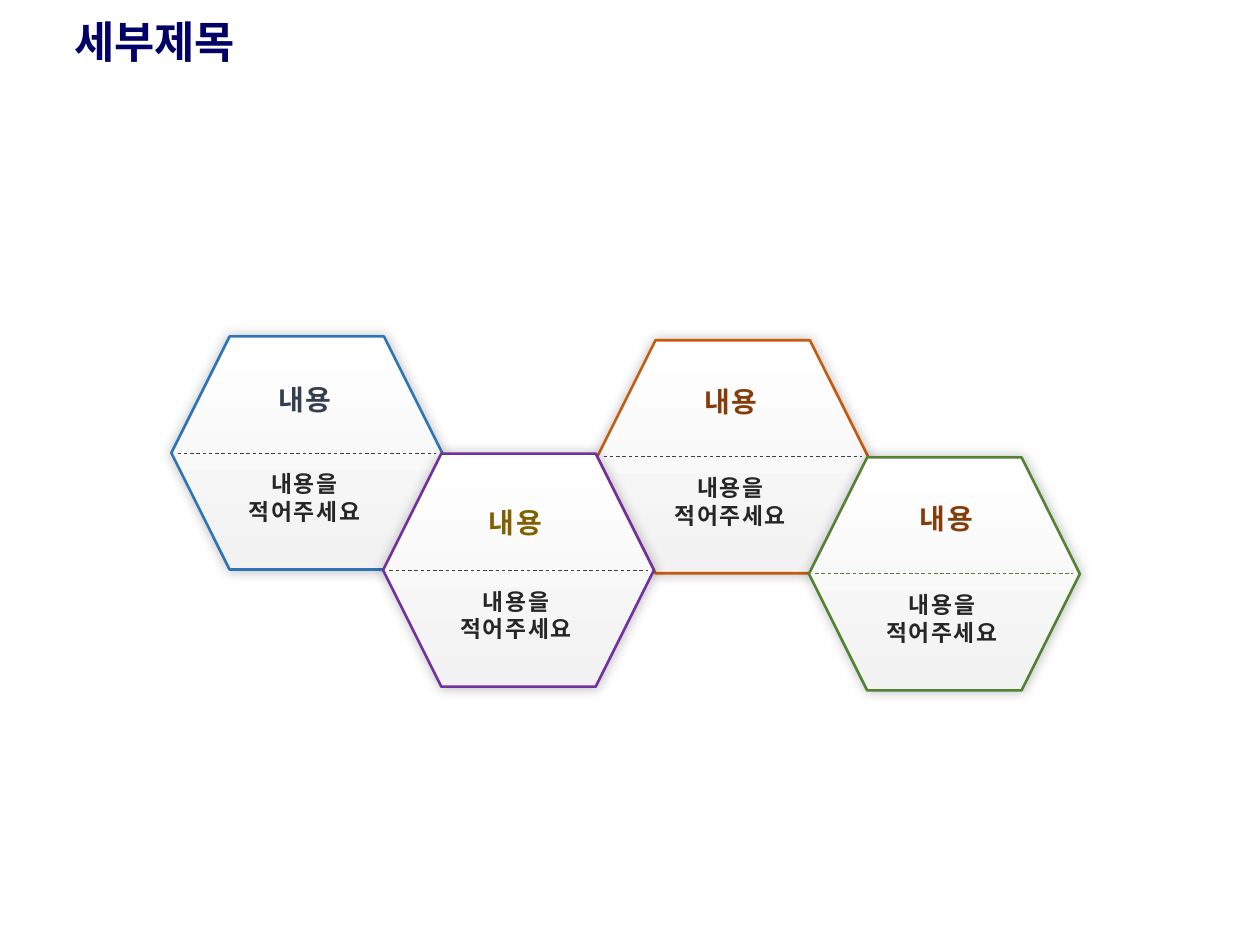
"""Build a slide of four linked hexagons, each with a heading and a note."""
from lxml.etree import SubElement
from pptx import Presentation
from pptx.dml.color import RGBColor
from pptx.enum.dml import MSO_LINE
from pptx.enum.shapes import MSO_CONNECTOR, MSO_SHAPE
from pptx.enum.text import MSO_ANCHOR, PP_ALIGN
from pptx.oxml.ns import qn
from pptx.util import Inches, Pt

NAVY = RGBColor(0x00, 0x00, 0x66)
BLUE = RGBColor(0x2E, 0x75, 0xB6)
SLATE = RGBColor(0x33, 0x3F, 0x50)
PURPLE = RGBColor(0x70, 0x30, 0xA0)
GOLD = RGBColor(0x80, 0x60, 0x00)
ORANGE = RGBColor(0xC5, 0x5A, 0x11)
BROWN = RGBColor(0x84, 0x3C, 0x0B)
GREEN = RGBColor(0x54, 0x82, 0x35)
GRAY = RGBColor(0x40, 0x40, 0x40)
INK = RGBColor(0x26, 0x26, 0x26)
WHITE = RGBColor(0xFF, 0xFF, 0xFF)
PALE = RGBColor(0xF2, 0xF2, 0xF2)

FONT = "Noto Sans CJK KR"
TITLE = "세부제목"
HEAD = "내용"
NOTE = ["내용을", "적어주세요"]
CELLS = [
    {"at": (4.74, 2.70), "edge": ORANGE, "rule": GRAY, "head": BROWN, "shift": (0.20, 0.32)},
    {"at": (1.36, 2.67), "edge": BLUE, "rule": GRAY, "head": SLATE, "shift": (0.20, 0.33)},
    {"at": (3.04, 3.60), "edge": PURPLE, "rule": GRAY, "head": GOLD, "shift": (0.19, 0.38)},
    {"at": (6.42, 3.63), "edge": GREEN, "rule": GREEN, "head": BROWN, "shift": (0.23, 0.32)},
]
WIDE, HIGH = 2.15, 1.85
INSET = 0.05


def write(frame, lines, size, color, font=FONT, align=PP_ALIGN.CENTER,
          pitch=None, gap=0, indent=0):
    frame.word_wrap = True
    for num, text in enumerate(lines):
        para = frame.add_paragraph() if num else frame.paragraphs[0]
        para.alignment = align
        para.line_spacing = pitch
        if indent:
            para._p.get_or_add_pPr().set("indent", str(Inches(indent)))
        run = para.add_run()
        run.text = text
        run.font.name = font
        run.font.size = Pt(size)
        run.font.bold = True
        run.font.color.rgb = color
        props = run._r.get_or_add_rPr()
        if gap:
            props.set("spc", str(gap * 100))
        props.find(qn("a:latin")).addnext(
            SubElement(props, qn("a:ea"), typeface=font))


def label(slide, left, top, width, height, lines, **form):
    box = slide.shapes.add_textbox(
        Inches(left), Inches(top), Inches(width), Inches(height))
    write(box.text_frame, lines, gap=1, **form)


def glow(shape):
    shape.shadow.inherit = False
    list_ = shape._element.spPr.find(qn("a:effectLst"))
    outer = SubElement(list_, qn("a:outerShdw"), blurRad=str(Pt(7)),
                       dist="0", dir="0", algn="ctr", rotWithShape="0")
    tint = SubElement(outer, qn("a:srgbClr"), val="000000")
    SubElement(tint, qn("a:alpha"), val="25000")


def hexagon(slide, left, top, edge, rule):
    group = slide.shapes.add_group_shape()
    hexa = group.shapes.add_shape(
        MSO_SHAPE.HEXAGON, Inches(left), Inches(top), Inches(WIDE), Inches(HIGH))
    hexa.fill.gradient()
    hexa.fill.gradient_angle = 270
    for stop, color in zip(hexa.fill.gradient_stops, (WHITE, PALE)):
        stop.color.rgb = color
    hexa.line.color.rgb = edge
    hexa.line.width = Pt(1.5)
    glow(hexa)
    mid = Inches(top + HIGH / 2)
    dash = group.shapes.add_connector(
        MSO_CONNECTOR.STRAIGHT, Inches(left + INSET), mid,
        Inches(left + WIDE - INSET), mid)
    dash.line.color.rgb = rule
    dash.line.width = Pt(0.5)
    dash.line.dash_style = MSO_LINE.DASH
    SubElement(dash._element.spPr, qn("a:effectLst"))


def main():
    deck = Presentation()
    deck.slide_width, deck.slide_height = Inches(10), Inches(7.5)
    slide = deck.slides.add_slide(deck.slide_layouts[5])
    title = slide.shapes.title
    title.left, title.top = Inches(0), Inches(0)
    title.width, title.height = Inches(8.62), Inches(0.7)
    title.text_frame.vertical_anchor = MSO_ANCHOR.MIDDLE
    write(title.text_frame, [TITLE], size=25, color=NAVY, font="Calibri",
          align=PP_ALIGN.LEFT, pitch=0.9, indent=0.49)
    for cell in CELLS:
        left, top = cell["at"]
        right, down = cell["shift"]
        hexagon(slide, left, top, cell["edge"], cell["rule"])
        label(slide, left + right, top + down, 1.72, 0.35, [HEAD],
              size=16, color=cell["head"], pitch=Pt(18))
        label(slide, left + 0.28, top + 1.01, 1.55, 0.54, NOTE,
              size=13, color=INK, pitch=Pt(15.8))
    deck.save("out.pptx")


if __name__ == "__main__":
    main()
